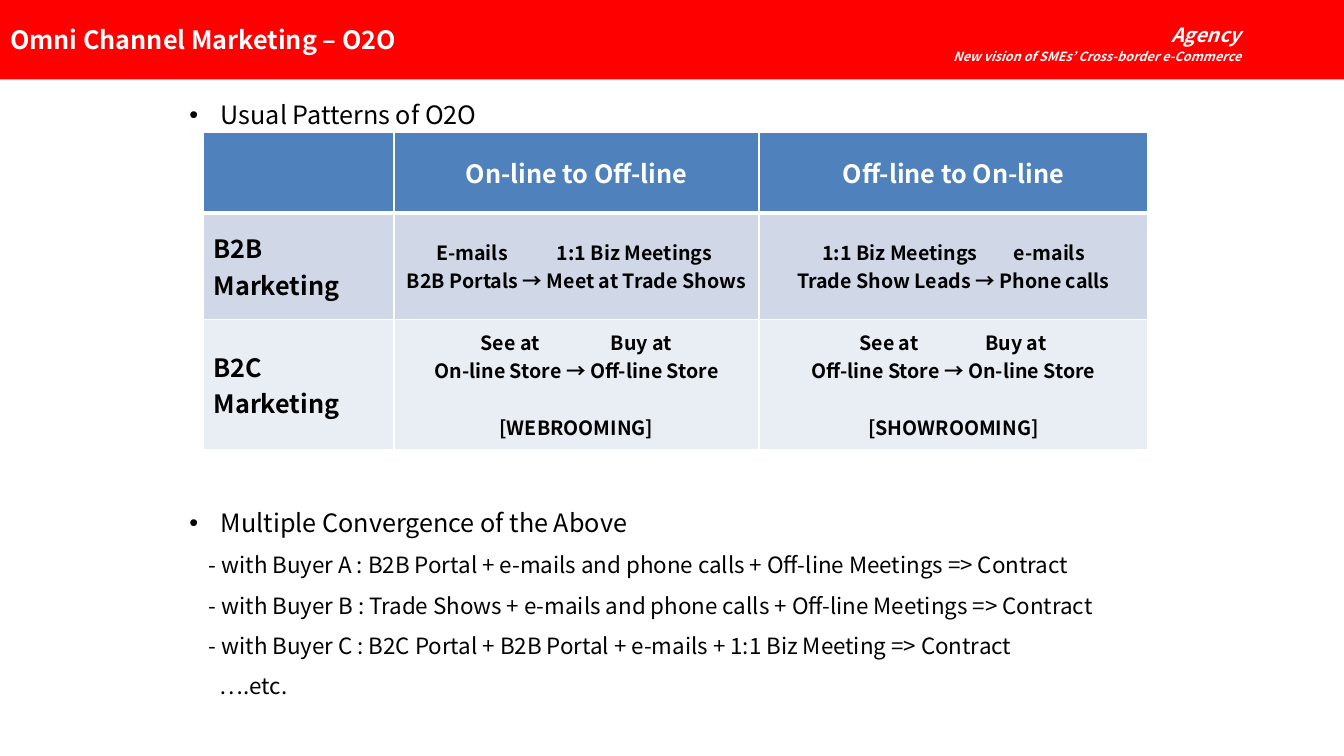
"""Builds the Omni Channel Marketing slide about O2O patterns."""
from dataclasses import dataclass

from lxml.etree import SubElement
from pptx import Presentation
from pptx.dml.color import RGBColor
from pptx.enum.text import MSO_ANCHOR as Anchor, MSO_AUTO_SIZE as AutoSize, PP_ALIGN as Align
from pptx.oxml.ns import qn
from pptx.util import Cm, Pt


@dataclass(frozen=True)
class Theme:
    """Colours and type sizes of the slide."""
    font: str = "Noto Sans CJK KR"
    banner: str = "FF0000"
    light: str = "FFFFFF"
    dark: str = "000000"
    header: str = "4F81BD"
    bands: tuple = ("D0D8E8", "E9EDF4")
    heading: float = 18
    detail: float = 16
    cell: float = 14
    brand: float = 14
    tagline: float = 9
    leading: float = 1.8


class SlideBuilder:
    """Draws styled elements on one slide."""

    def __init__(self, presentation, theme):
        """Add a title-and-content slide."""
        self.theme = theme
        self.slide = presentation.slides.add_slide(presentation.slide_layouts[1])

    def format_runs(self, paragraph, size, color, bold=False, italic=False):
        """Apply the theme font to every run."""
        for run in paragraph.runs:
            font = run.font
            font.name, font.size, font.bold, font.italic = self.theme.font, Pt(size), bold, italic
            font.color.rgb = RGBColor.from_string(color)
            SubElement(font._element, qn("a:ea"), typeface=self.theme.font)

    def place(self, shape, left, top, width, height):
        """Position a shape and fix its text frame."""
        shape.left, shape.top, shape.width, shape.height = map(Cm, (left, top, width, height))
        shape.text_frame.word_wrap = True
        shape.text_frame.auto_size = AutoSize.NONE
        return shape.text_frame

    def banner(self, text, width, height):
        """Turn the title placeholder into a full-width banner."""
        title = self.slide.shapes.title
        frame = self.place(title, 0, 0, width, height)
        title.fill.solid()
        title.fill.fore_color.rgb = RGBColor.from_string(self.theme.banner)
        frame.text = text
        frame.vertical_anchor = Anchor.MIDDLE
        frame.paragraphs[0].alignment = Align.LEFT
        self.format_runs(frame.paragraphs[0], self.theme.heading, self.theme.light, True)

    def banner_note(self, text, top, height, size):
        """Add a right-aligned italic line to the banner."""
        frame = self.place(self.slide.shapes.add_textbox(0, 0, 0, 0), 22.73, top, 8.79, height)
        frame.text = text
        frame.paragraphs[0].alignment = Align.RIGHT
        self.format_runs(frame.paragraphs[0], size, self.theme.light, True, True)

    def outline(self, items, left, top, width, height):
        """Fill the body with (text, indent, space before); no indent means a bullet."""
        frame = self.place(self.slide.placeholders[1], left, top, width, height)
        frame.text = "\n".join(text for text, _, _ in items)
        frame.vertical_anchor = Anchor.TOP
        for paragraph, (_, indent, space) in zip(frame.paragraphs, items):
            bulleted = indent is None
            size = self.theme.heading if bulleted else self.theme.detail
            paragraph.alignment = Align.LEFT
            paragraph.line_spacing = Pt(size * self.theme.leading)
            paragraph.space_before = Pt(space)
            properties = paragraph._p.get_or_add_pPr()
            properties.set("marL", str(Cm(0.79 if bulleted else indent)))
            properties.set("indent", str(Cm(-0.79 if bulleted else 0)))
            if bulleted:
                SubElement(properties, qn("a:buChar"), char="•")
            else:
                SubElement(properties, qn("a:buNone"))
            self.format_runs(paragraph, size, self.theme.dark)

    def paint_cell(self, cell, color, bottom=1):
        """Give a cell its fill and white borders."""
        properties = cell._tc.get_or_add_tcPr()
        for side, weight in (("L", 1), ("R", 1), ("T", 1), ("B", bottom)):
            line = SubElement(properties, qn(f"a:ln{side}"), w=str(Pt(weight)))
            SubElement(SubElement(line, qn("a:solidFill")), qn("a:srgbClr"), val=self.theme.light)
        cell.fill.solid()
        cell.fill.fore_color.rgb = RGBColor.from_string(color)
        cell.vertical_anchor = Anchor.MIDDLE

    def write_pattern(self, cell, pair, flow, stops, label=None):
        """Write a pair of words on centred tabs above a flow, with an optional label."""
        lines = ["\t" + "\t".join(pair), flow] + ([label] if label else [])
        cell.text_frame.text = "\n".join(lines)
        paragraphs = cell.text_frame.paragraphs
        for paragraph in paragraphs:
            paragraph.alignment = Align.CENTER
            self.format_runs(paragraph, self.theme.cell, self.theme.dark, True)
        paragraphs[0].alignment = Align.LEFT
        tabs = SubElement(paragraphs[0]._p.get_or_add_pPr(), qn("a:tabLst"))
        for stop in stops:
            SubElement(tabs, qn("a:tab"), pos=str(Cm(stop)), algn="ctr")
        if label:
            paragraphs[-1].space_before = Pt(20.3)

    def pattern_table(self, headings, rows, left, top, widths, heights):
        """Add the table of patterns."""
        frame = self.slide.shapes.add_table(
            len(heights), len(widths), Cm(left), Cm(top), Cm(sum(widths)), Cm(sum(heights)))
        table = frame.table
        for column, width in zip(table.columns, widths):
            column.width = Cm(width)
        for row, height in zip(table.rows, heights):
            row.height = Cm(height)
        for cell, heading in zip(table.rows[0].cells, headings):
            self.paint_cell(cell, self.theme.header, 3)
            cell.text_frame.text = heading
            cell.text_frame.paragraphs[0].alignment = Align.CENTER
            self.format_runs(cell.text_frame.paragraphs[0], self.theme.heading, self.theme.light, True)
        for index, (name, patterns) in enumerate(rows):
            cells = list(table.rows[index + 1].cells)
            for cell in cells:
                self.paint_cell(cell, self.theme.bands[index])
            cells[0].text_frame.text = name
            self.format_runs(cells[0].text_frame.paragraphs[0], self.theme.heading, self.theme.dark, True)
            for cell, pattern in zip(cells[1:], patterns):
                self.write_pattern(cell, *pattern)


OUTLINE = [
    ("Usual Patterns of O2O", None, 0),
    ("Multiple Convergence of the Above", None, 259.2),
    ("- with Buyer A : B2B Portal + e-mails and phone calls + Off-line Meetings => Contract", 0.49, 0),
    ("- with Buyer B : Trade Shows + e-mails and phone calls + Off-line Meetings => Contract", 0.49, 0),
    ("- with Buyer C : B2C Portal + B2B Portal + e-mails + 1:1 Biz Meeting => Contract", 0.49, 0),
    ("….etc.", 0.77, 0),
]
PATTERNS = [
    ("B2B Marketing", [
        (("E-mails", "1:1 Biz Meetings"), "B2B Portals → Meet at Trade Shows", (1.71, 5.81)),
        (("1:1 Biz Meetings", "e-mails"), "Trade Show Leads → Phone calls", (3.3, 7.06)),
    ]),
    ("B2C Marketing", [
        (("See at", "Buy at"), "On-line Store → Off-line Store", (2.67, 5.98), "[WEBROOMING]"),
        (("See at", "Buy at"), "Off-line Store → On-line Store", (3.02, 6.22), "[SHOWROOMING]"),
    ]),
]


def main():
    """Build and save the presentation."""
    presentation = Presentation()
    presentation.slide_width, presentation.slide_height = Cm(33.87), Cm(19.05)
    theme = Theme()
    builder = SlideBuilder(presentation, theme)
    builder.banner("Omni Channel Marketing – O2O", 33.87, 2)
    builder.banner_note("New vision of SMEs’ Cross-border e-Commerce", 1.12, 0.64, theme.tagline)
    builder.banner_note("Agency", 0.46, 0.86, theme.brand)
    builder.outline(OUTLINE, 4.52, 2, 24.82, 15.9)
    builder.pattern_table(("", "On-line to Off-line", "Off-line to On-line"), PATTERNS,
                          5.13, 3.33, (4.8, 9.2, 9.8), (2.03, 2.69, 3.28))
    presentation.save("out.pptx")


if __name__ == "__main__":
    main()
